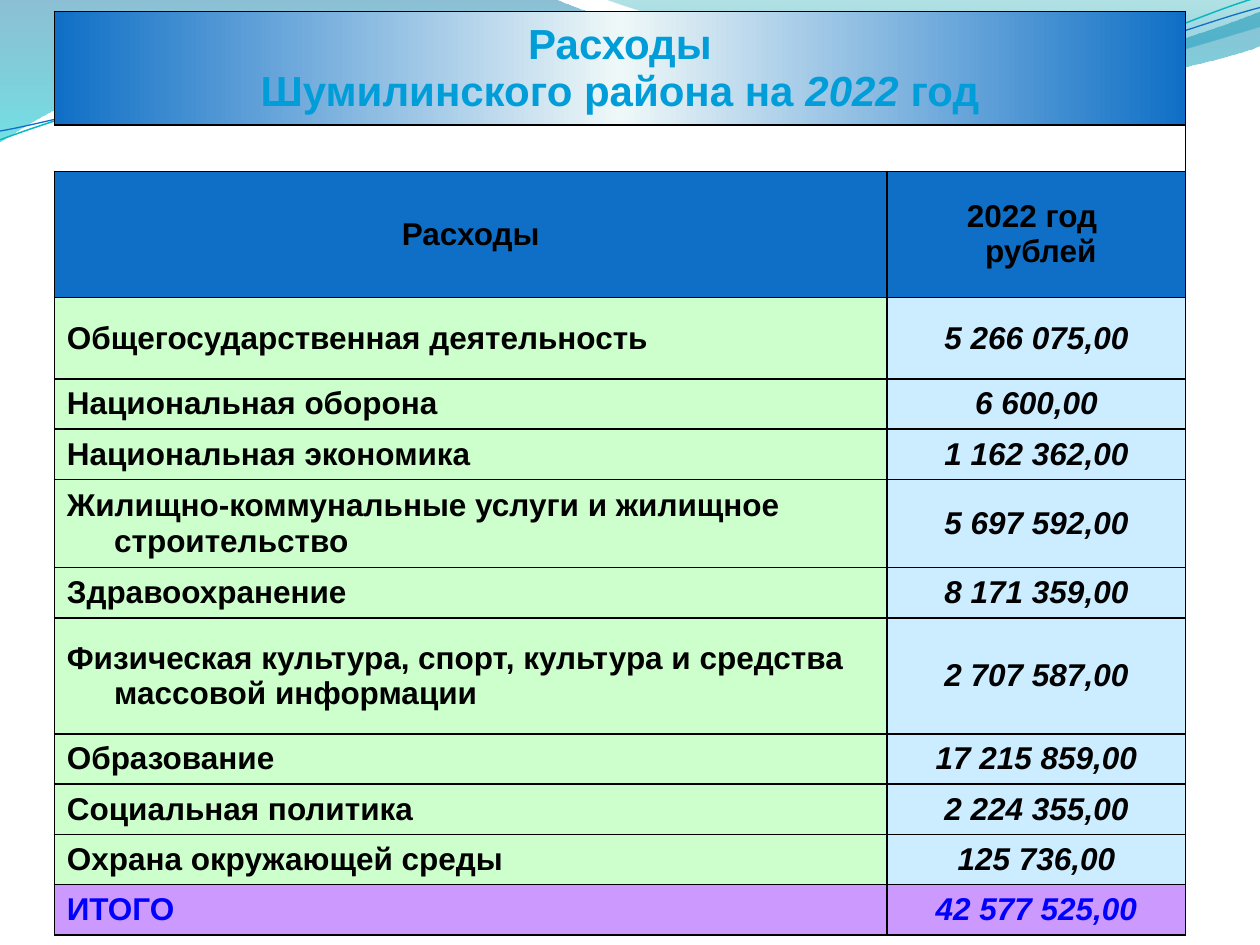
import math
from pptx import Presentation
from pptx import util as u
from pptx.dml.color import RGBColor
from pptx.enum import text
from pptx.oxml import parse_xml
from pptx.oxml.ns import qn

Pt = u.Pt
NS = 'xmlns:a="http://schemas.openxmlformats.org/drawingml/2006/main"'
BLACK = RGBColor(0x00, 0x00, 0x00)
SKY = RGBColor(0x00, 0x9D, 0xD9)
BLUE = RGBColor(0x0F, 0x6F, 0xC6)
TEAL = RGBColor(0x0A, 0xB8, 0xBF)
GREEN = RGBColor(0xCC, 0xFF, 0xCC)
PALE_BLUE = RGBColor(0xCC, 0xEC, 0xFF)
VIOLET = RGBColor(0xCC, 0x99, 0xFF)
TOTAL_BLUE = RGBColor(0x00, 0x00, 0xFF)

# Content: a paragraph is a list of (wording, italic) runs
TITLE = [[("Расходы", False)],
         [("Шумилинского района на ", False), ("2022", True), (" год", False)]]
HEADINGS = [[[("Расходы", False)]],
            [[("2022 год ", False)], [(" рублей", False)]]]
LOW_ROW = 28.75
EXPENSES = [  # item, roubles, row height
    ("Общегосударственная деятельность", "5 266 075,00", 46.6),
    ("Национальная оборона", "6 600,00", LOW_ROW),
    ("Национальная экономика", "1 162 362,00", LOW_ROW),
    ("Жилищно-коммунальные услуги и жилищное строительство", "5 697 592,00", 50.4),
    ("Здравоохранение", "8 171 359,00", LOW_ROW),
    ("Физическая культура, спорт, культура и средства массовой информации",
     "2 707 587,00", 66.2),
    ("Образование", "17 215 859,00", LOW_ROW),
    ("Социальная политика", "2 224 355,00", LOW_ROW),
    ("Охрана окружающей среды", "125 736,00", LOW_ROW),
    ("ИТОГО", "42 577 525,00", LOW_ROW),
]
TABLE_LEFT, TABLE_TOP = 31, 6.5
COLUMNS = [475.92, 170.64]
ROWS = [64.8, 26.64, 72] + [height for _, _, height in EXPENSES]

# Waves in points: one point makes a line, three make a Bezier curve
BANDS = [  # start, segments, gradient stops (position, colour, opacity)
    ((0, 0),
     [[(316.8, -0.72)], [(342.72, 12.24), (478.08, 45.36), (545.76, 45.36)],
      [(614.16, 45.36), (689.76, 18.72), (720, 6.48)], [(720.72, 25.92)],
      [(707.76, 31.68), (626.4, 54.72), (537.12, 54)],
      [(447.84, 54), (275.04, 20.16), (185.04, 24.48)],
      [(92.88, 25.92), (33.12, 59.76), (-0.72, 81.36)], [(0, 0)]],
     [(0, "0074A1", 45), (100, "00C6CF", 55)]),
    ((344.88, -0.72),
     [[(366.48, 7.92), (491.04, 44.64), (553.68, 46.8)],
      [(616.32, 49.68), (691.92, 23.04), (720, 15.12)], [(720, 0)], [(344.88, -0.72)]],
     [(0, "00A1A9", 30), (80, "008BBF", 45)]),
]
THREADS = [  # start, segments, centre, colour, width
    ((0, 79.92),
     [[(34.56, 66.96), (113.76, 41.04), (199.44, 37.44)],
      [(284.4, 33.84), (426.96, 64.08), (513.36, 57.6)],
      [(599.76, 51.12), (675.36, 10.8), (718.56, -1.44)]],
     (359.28, 41.4), TEAL, 0.85),
    ((0, 74.88),
     [[(33.84, 69.12), (118.08, 43.92), (203.76, 40.32)],
      [(290.16, 36.72), (429.84, 60.48), (516.24, 54)],
      [(601.92, 48.24), (677.52, 15.12), (720, 4.32)]],
     (359.64, 42.48), BLUE, 0.75),
]
TILT = 357.3
UNITS = 100  # freeform units in a point


def gradient(stops, angle):
    marks = "".join(
        f'<a:gs pos="{pos * 1000}"><a:srgbClr val="{colour}">'
        f'<a:alpha val="{opacity * 1000}"/></a:srgbClr></a:gs>'
        for pos, colour, opacity in stops)
    return parse_xml(f'<a:gradFill {NS} rotWithShape="1"><a:gsLst>{marks}</a:gsLst>'
                     f'<a:lin ang="{angle * 60000}" scaled="0"/></a:gradFill>')


def turn(point, centre, degrees):
    cos, sin = math.cos(math.radians(degrees)), math.sin(math.radians(degrees))
    dx, dy = point[0] - centre[0], point[1] - centre[1]
    return centre[0] + dx * cos - dy * sin, centre[1] + dx * sin + dy * cos


def add_wave(slide, start, segments, close):
    start, *ends = [(round(x * UNITS), round(y * UNITS))
                    for x, y in [start] + [segment[-1] for segment in segments]]
    builder = slide.shapes.build_freeform(*start, scale=Pt(1) / UNITS)
    builder.add_line_segments(ends, close=close)
    wave = builder.convert_to_shape()
    wave.shadow.inherit = False
    wave.fill.background()

    # Bend the straight segments that have control points
    left, top = (min(values) for values in zip(start, *ends))
    for line, segment in zip(list(wave._element.iter(qn("a:lnTo"))), segments):
        if len(segment) == 3:
            points = "".join(f'<a:pt x="{round(x * UNITS) - left}" y="{round(y * UNITS) - top}"/>'
                             for x, y in segment)
            line.getparent().replace(
                line, parse_xml(f'<a:cubicBezTo {NS}>{points}</a:cubicBezTo>'))
    return wave


def set_borders(cell, visible="LRTB"):
    properties = cell._tc.get_or_add_tcPr()
    for index, side in enumerate("LRTB"):
        paint = ('<a:solidFill><a:srgbClr val="000000"/></a:solidFill>'
                 if side in visible else '<a:noFill/>')
        properties.insert(index, parse_xml(
            f'<a:ln{side} {NS} w="{Pt(1)}">{paint}</a:ln{side}>'))


def fill_cell(cell, paragraphs, fill, colour, size=18, centred=True):
    cell.vertical_anchor = text.MSO_ANCHOR.MIDDLE
    cell.margin_left = cell.margin_right = Pt(7.2)
    cell.margin_top = cell.margin_bottom = Pt(3.6)
    if fill is not None:
        cell.fill.solid()
        cell.fill.fore_color.rgb = fill
    set_borders(cell)
    frame = cell.text_frame
    for number, runs in enumerate(paragraphs):
        paragraph = frame.add_paragraph() if number else frame.paragraphs[0]
        paragraph.alignment = text.PP_ALIGN.CENTER if centred else text.PP_ALIGN.LEFT
        indents = paragraph._p.get_or_add_pPr()
        indents.set("marL", str(Pt(27)))
        indents.set("indent", str(-Pt(27)))
        for wording, italic in runs:
            run = paragraph.add_run()
            run.text = wording
            run.font.name = "Arial"
            run.font.size = Pt(size)
            run.font.bold = True
            run.font.italic = italic
            run.font.color.rgb = colour


def main():
    prs = Presentation()
    prs.slide_width, prs.slide_height = Pt(720), Pt(540)
    slide = prs.slides.add_slide(prs.slide_layouts[6])

    # Waves along the top
    for start, segments, stops in BANDS:
        band = add_wave(slide, start, segments, True)
        band.line.fill.background()
        no_fill = band._element.spPr.find(qn("a:noFill"))
        no_fill.getparent().replace(no_fill, gradient(stops, 90))
    for start, segments, centre, colour, width in THREADS:
        level = [[turn(point, centre, -TILT) for point in segment] for segment in segments]
        thread = add_wave(slide, turn(start, centre, -TILT), level, False)
        thread.rotation = TILT
        thread.line.color.rgb = colour
        thread.line.width = Pt(width)

    # Table grid, without a built-in style
    frame = slide.shapes.add_table(len(ROWS), len(COLUMNS), Pt(TABLE_LEFT), Pt(TABLE_TOP),
                                   Pt(sum(COLUMNS)), Pt(sum(ROWS)))
    table = frame.table
    table.first_row = table.horz_banding = False
    table._tbl.tblPr.find(qn("a:tableStyleId")).text = "{2D5ABB26-0587-4C30-8999-92F81FD0307C}"
    for column, width in zip(table.columns, COLUMNS):
        column.width = Pt(width)
    for row, height in zip(table.rows, ROWS):
        row.height = Pt(height)

    # Title across both columns
    title = table.cell(0, 0)
    title.merge(table.cell(0, 1))
    fill_cell(title, TITLE, None, SKY, size=24)
    title._tc.tcPr.append(gradient(
        [(0, "0F6FC6", 100), (50, "EFF8F8", 100), (100, "0F6FC6", 100)], 0))
    set_borders(table.cell(0, 1))

    # Open spacer row
    for column, sides in enumerate(("TB", "RTB")):
        spacer = table.cell(1, column)
        spacer.margin_top = spacer.margin_bottom = 0
        spacer.fill.background()
        set_borders(spacer, sides)

    # Headings and expenses, the total last
    for column, heading in enumerate(HEADINGS):
        fill_cell(table.cell(2, column), heading, BLUE, BLACK)
    for row, (item, roubles, _) in enumerate(EXPENSES, start=3):
        is_total = row == len(ROWS) - 1
        colour = TOTAL_BLUE if is_total else BLACK
        fill_cell(table.cell(row, 0), [[(item, False)]],
                  VIOLET if is_total else GREEN, colour, centred=False)
        fill_cell(table.cell(row, 1), [[(roubles, True)]],
                  VIOLET if is_total else PALE_BLUE, colour)

    prs.save("out.pptx")


if __name__ == "__main__":
    main()
